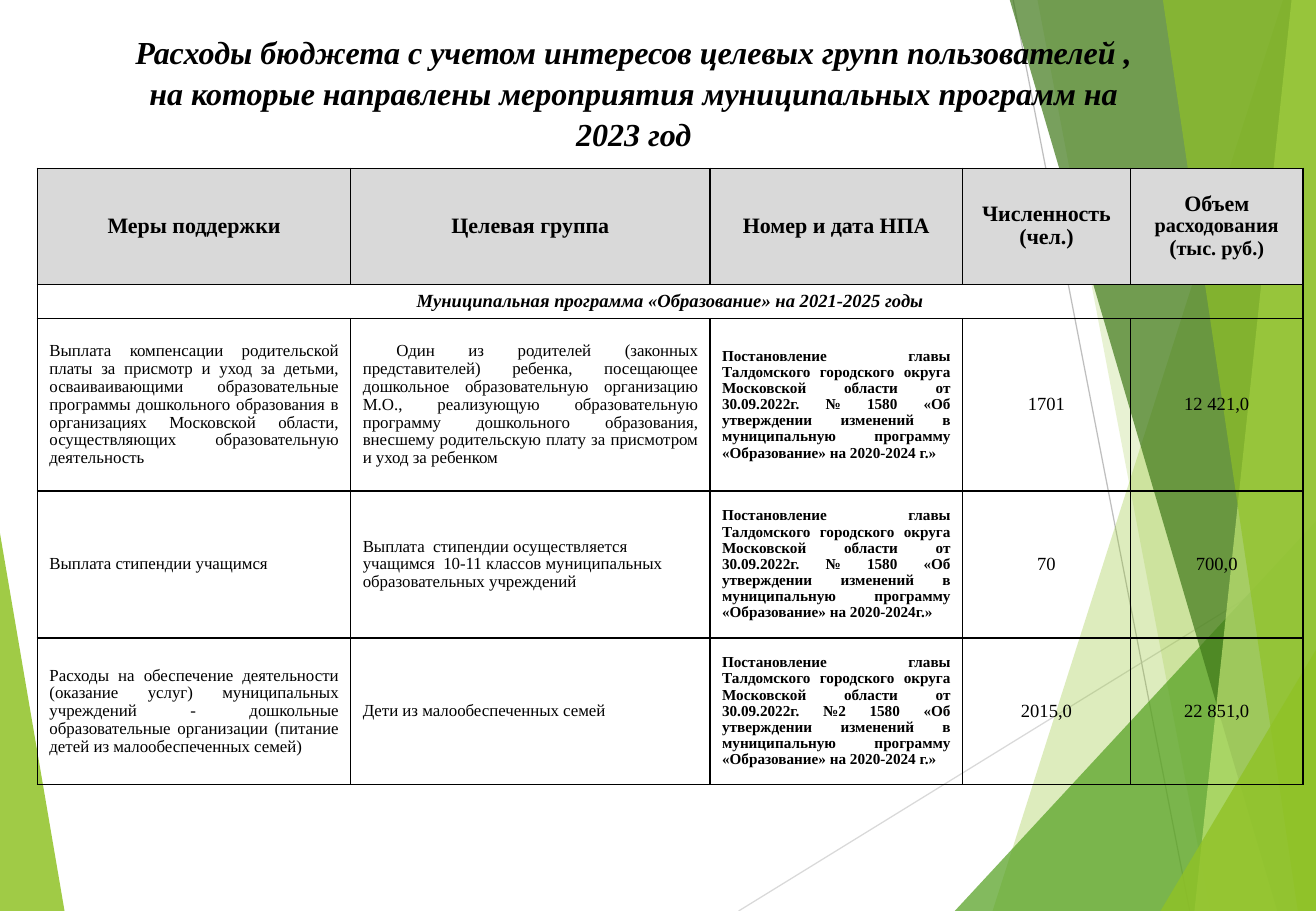
from lxml import etree
from pptx import Presentation
from pptx import util as u
from pptx.dml.color import RGBColor
from pptx.enum import shapes, text
from pptx.oxml import ns

COLORS = {
    "black": "000000", "header": "D9D9D9", "line_light": "D9D9D9", "line_dark": "BFBFBF",
    "lime": "90C226", "green": "54A021", "forest": "3F7819", "pale": "C0E474",
}
FONT = "Times New Roman"
WIDTH, HEIGHT = 27.51, 19.05
CENTER, JUSTIFY, LEFT = text.PP_ALIGN.CENTER, text.PP_ALIGN.JUSTIFY, text.PP_ALIGN.LEFT


def style(paragraph, size, bold, italic, align, spacing):
    paragraph.alignment = align
    paragraph.line_spacing = spacing
    font = paragraph.font
    font.name, font.size, font.bold, font.italic = FONT, u.Pt(size), bold, italic
    font.color.rgb = RGBColor.from_string(COLORS["black"])


def fill_cell(cell, content, size, bold=False, italic=False, align=CENTER, after=0):
    cell.vertical_anchor = text.MSO_ANCHOR.MIDDLE
    cell.text = content
    for paragraph in cell.text_frame.paragraphs:
        style(paragraph, size, bold, italic, align, 0.96)
        paragraph.space_after = u.Pt(after)


presentation = Presentation()
presentation.slide_width, presentation.slide_height = u.Cm(WIDTH), u.Cm(HEIGHT)
slide = presentation.slides.add_slide(presentation.slide_layouts[6])

rays = [
    ("line_light", (15.44, HEIGHT), (WIDTH, 11.61)),
    ("line_dark", (21.18, 0), (24.87, HEIGHT)),
]
right_edge = [(WIDTH, HEIGHT), (WIDTH, 0)]
facets = [
    ("lime", 85, [(0, 11.15), (1.35, HEIGHT), (0, HEIGHT)]),
    ("lime", 30, [(26.82, 0), (20.75, HEIGHT), *right_edge]),
    ("lime", 20, [(21.69, 0), (25.3, HEIGHT), *right_edge]),
    ("green", 72, [(19.96, HEIGHT), (WIDTH, 10.9), (WIDTH, HEIGHT)]),
    ("forest", 70, [(21.11, 0), (26.7, HEIGHT), *right_edge]),
    ("pale", 70, [(27, 0), (24.97, HEIGHT), *right_edge]),
    ("lime", 65, [(24.31, 0), (27.13, HEIGHT), *right_edge]),
    ("lime", 80, [(24.26, HEIGHT), (WIDTH, 13.59), (WIDTH, HEIGHT)]),
]

for color, start, end in rays:
    ray = slide.shapes.add_connector(
        shapes.MSO_CONNECTOR.STRAIGHT, *(u.Cm(value) for value in start + end))
    ray.line.color.rgb = RGBColor.from_string(COLORS[color])
    ray.line.width = u.Pt(0.75)
    etree.SubElement(ray._element.spPr, ns.qn("a:effectLst"))

for color, opacity, points in facets:
    outline = [(u.Cm(x), u.Cm(y)) for x, y in points]
    builder = slide.shapes.build_freeform(*outline[0])
    builder.add_line_segments(outline[1:], close=True)
    facet = builder.convert_to_shape()
    facet.shadow.inherit = False
    facet.line.fill.background()
    facet.fill.solid()
    facet.fill.fore_color.rgb = RGBColor.from_string(COLORS[color])
    tint = facet._element.spPr.find(".//" + ns.qn("a:srgbClr"))
    etree.SubElement(tint, ns.qn("a:alpha"), val=str(opacity * 1000))

title = slide.shapes.add_textbox(u.Cm(2.72), u.Cm(0.64), u.Cm(21.06), u.Cm(6.88))
frame = title.text_frame
frame.word_wrap = False
frame.margin_left = frame.margin_right = frame.margin_top = frame.margin_bottom = 0
frame.text = (
    "Расходы бюджета с учетом интересов целевых групп пользователей ,\n"
    "на которые направлены мероприятия муниципальных программ на 2023 год"
)
for paragraph in frame.paragraphs:
    style(paragraph, 19, True, True, CENTER, 1.06)

column_widths = [6.55, 7.51, 5.28, 3.51, 3.61]
row_heights = [2.43, 0.71, 3.61, 3.07, 3.07]
table = slide.shapes.add_table(
    len(row_heights), len(column_widths), u.Cm(0.78), u.Cm(3.52),
    u.Cm(sum(column_widths)), u.Cm(sum(row_heights))).table
table.first_row = table.horz_banding = False
for column, width in zip(table.columns, column_widths):
    column.width = u.Cm(width)
for row, height in zip(table.rows, row_heights):
    row.height = u.Cm(height)

headings = ["Меры поддержки", "Целевая группа", "Номер и дата НПА", "Численность (чел.)"]
for index, heading in enumerate(headings):
    fill_cell(table.cell(0, index), heading, 13, bold=True)

volume = table.cell(0, 4)
fill_cell(volume, "\n", 13, bold=True)
volume_runs = [[("Объем ", 13), ("расходования", 12)], [("(", 13), ("тыс. руб.)", 12)]]
for paragraph, runs in zip(volume.text_frame.paragraphs, volume_runs):
    for content, size in runs:
        run = paragraph.add_run()
        run.text = content
        run.font.size = u.Pt(size)

table.cell(1, 0).merge(table.cell(1, 4))
fill_cell(table.cell(1, 0), "Муниципальная программа «Образование» на 2021-2025 годы", 11, True, True)

decree = (
    "Постановление главы Талдомского городского округа Московской области от 30.09.2022г. "
    "{} 1580 «Об утверждении изменений в муниципальную программу «Образование» на {}»"
)
measures = [
    ("Выплата компенсации родительской платы за присмотр и уход за детьми, осваиваивающими "
     "образовательные программы дошкольного образования в организациях Московской области, "
     "осуществляющих образовательную деятельность",
     " Один из родителей (законных представителей) ребенка, посещающее дошкольное "
     "образовательную организацию М.О., реализующую образовательную программу дошкольного "
     "образования, внесшему родительскую плату за присмотром и уход за ребенком",
     JUSTIFY, 10, decree.format("№", "2020-2024 г."), "1701", "12 421,0"),
    ("Выплата стипендии учащимся",
     "Выплата  стипендии осуществляется учащимся  10-11 классов муниципальных "
     "образовательных учреждений",
     LEFT, 0, decree.format("№", "2020-2024г."), "70", "700,0"),
    ("Расходы на обеспечение деятельности (оказание услуг) муниципальных учреждений - "
     "дошкольные образовательные организации (питание детей из малообеспеченных семей)",
     "Дети из малообеспеченных семей",
     JUSTIFY, 0, decree.format("№2", "2020-2024 г."), "2015,0", "22 851,0"),
]
for index, (measure, group, align, after, act, people, amount) in enumerate(measures, start=2):
    fill_cell(table.cell(index, 0), measure, 10, align=align)
    fill_cell(table.cell(index, 1), group, 10, align=align, after=after)
    fill_cell(table.cell(index, 2), act, 9, bold=True, align=JUSTIFY, after=10)
    fill_cell(table.cell(index, 3), people, 11)
    fill_cell(table.cell(index, 4), amount, 11)

for row_index, row in enumerate(table.rows):
    for cell in row.cells:
        if row_index == 0:
            cell.fill.solid()
            cell.fill.fore_color.rgb = RGBColor.from_string(COLORS["header"])
        else:
            cell.fill.background()
        properties = cell._tc.get_or_add_tcPr()
        for position, side in enumerate(["lnL", "lnR", "lnT", "lnB"]):
            border = etree.Element(ns.qn("a:" + side), w=str(u.Pt(1)))
            solid = etree.SubElement(border, ns.qn("a:solidFill"))
            etree.SubElement(solid, ns.qn("a:srgbClr"), val=COLORS["black"])
            properties.insert(position, border)

presentation.save("out.pptx")
